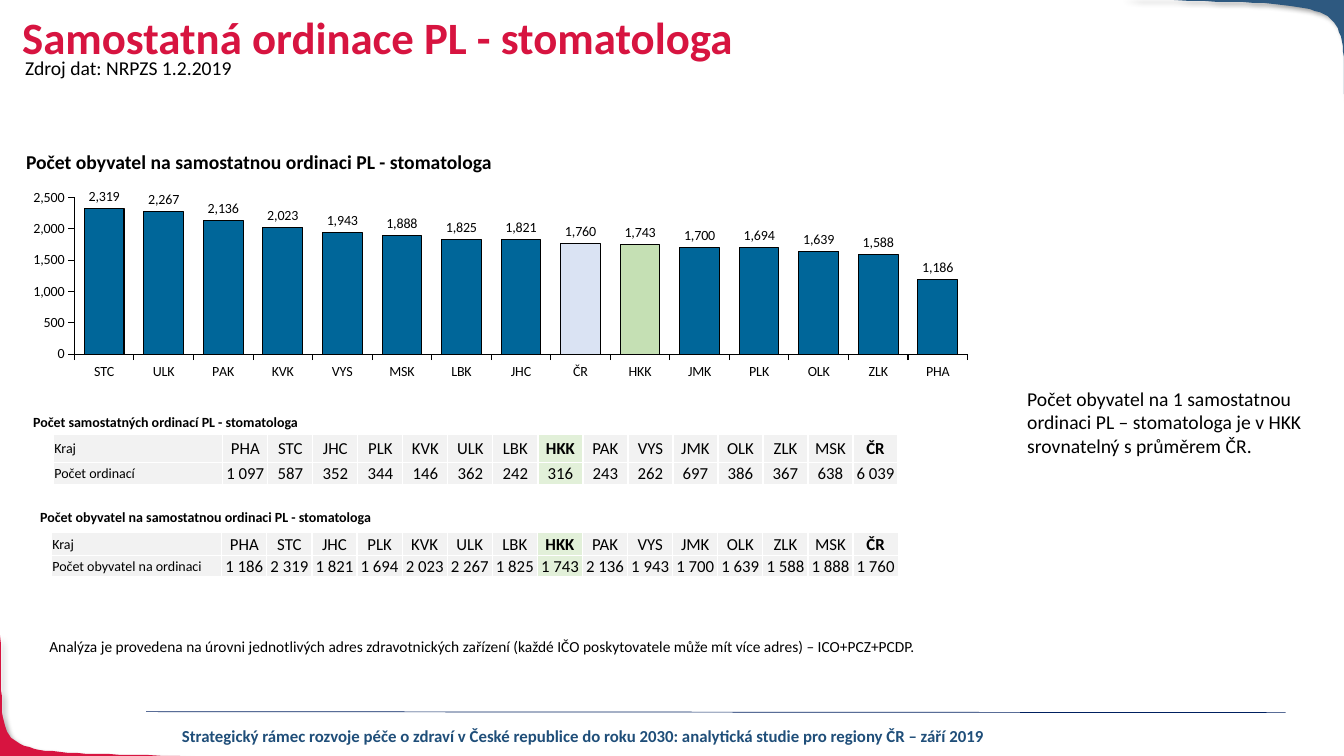
from lxml.etree import SubElement
from pptx import Presentation
from pptx.chart.data import CategoryChartData
from pptx.dml.color import RGBColor
from pptx.enum.chart import XL_CHART_TYPE, XL_LABEL_POSITION, XL_TICK_MARK
from pptx.enum.shapes import MSO_CONNECTOR, MSO_SHAPE
from pptx.enum.text import MSO_ANCHOR, MSO_AUTO_SIZE, PP_ALIGN
from pptx.oxml import parse_xml
from pptx.oxml.ns import nsdecls, qn
from pptx.util import Pt

PX = 9144  # 100 px to the inch
FONT = "Calibri"
BLACK, WHITE = "000000", "FFFFFF"
RED, BLUE, NAVY = "D71440", "2E5980", "002060"
CELL, CELL_HKK = "F2F2F2", "E2F0D9"
BAR, BAR_CR, BAR_HKK = "006699", "DAE3F3", "C5E0B4"

REGIONS = ["PHA", "STC", "JHC", "PLK", "KVK", "ULK", "LBK", "HKK",
           "PAK", "VYS", "JMK", "OLK", "ZLK", "MSK", "ČR"]
PRACTICES = [1097, 587, 352, 344, 146, 362, 242, 316,
             243, 262, 697, 386, 367, 638, 6039]
INHABITANTS = [1186, 2319, 1821, 1694, 2023, 2267, 1825, 1743,
               2136, 1943, 1700, 1639, 1588, 1888, 1760]
PER_PRACTICE = "Počet obyvatel na samostatnou ordinaci PL - stomatologa"


def color(value):
    return RGBColor.from_string(value)


def px(*lengths):
    return [length * PX for length in lengths]


def paint(target, fill, line=None, width=0.75):
    target.fill.solid()
    target.fill.fore_color.rgb = color(fill)
    if line:
        target.line.color.rgb = color(line)
        target.line.width = Pt(width)
    else:
        target.line.fill.background()


def set_font(font, size, ink=BLACK, bold=False):
    font.name = FONT
    font.size = Pt(size)
    font.bold = bold
    font.color.rgb = color(ink)


def write(frame, text, size, ink=BLACK, bold=False, align=PP_ALIGN.LEFT):
    para = frame.paragraphs[0]
    para.alignment = align
    span = para.add_run()
    span.text = text
    set_font(span.font, size, ink, bold)
    return para


def add_text(page, place, text, size, **style):
    box = page.shapes.add_textbox(*px(*place))
    box.text_frame.word_wrap = True
    write(box.text_frame, text, size, **style)


def add_title(page, place, text):
    title = page.shapes.title
    title.left, title.top, title.width, title.height = px(*place)
    frame = title.text_frame
    frame.auto_size = MSO_AUTO_SIZE.NONE
    frame.vertical_anchor = MSO_ANCHOR.TOP
    write(frame, text, 32, RED, True).line_spacing = 0.9


def curve(points, steps=40):
    """Return points along a cubic Bézier curve."""
    for step in range(steps + 1):
        t = step / steps
        weights = ((1 - t) ** 3, 3 * t * (1 - t) ** 2, 3 * t * t * (1 - t), t ** 3)
        yield tuple(sum(w * p[axis] for w, p in zip(weights, points)) for axis in (0, 1))


def add_corner(page, bend, corner, fill):
    start, *rest = curve(bend)
    builder = page.shapes.build_freeform(*start, scale=PX)
    builder.add_line_segments(rest + [corner], close=True)
    shape = builder.convert_to_shape()
    paint(shape, fill)
    shape.shadow.inherit = False
    effects = shape.element.spPr.find(qn("a:effectLst"))
    effects.append(parse_xml(
        f'<a:outerShdw {nsdecls("a")} blurRad="50800" dist="38100" dir="2700000">'
        f'<a:srgbClr val="{BLACK}"><a:alpha val="40000"/></a:srgbClr></a:outerShdw>'))


def add_rule(page, start, end):
    rule = page.shapes.add_connector(MSO_CONNECTOR.STRAIGHT, *px(*start, *end))
    rule.line.color.rgb = color(NAVY)
    rule.line.width = Pt(0.5)
    SubElement(rule.element.spPr, qn("a:effectLst"))


def add_comment(page, place, text):
    panel = page.shapes.add_shape(MSO_SHAPE.RECTANGLE, *px(*place))
    panel.shadow.inherit = False
    paint(panel, WHITE, WHITE, 0.25)
    panel.text_frame.word_wrap = True
    panel.text_frame.vertical_anchor = MSO_ANCHOR.MIDDLE
    write(panel.text_frame, text, 14)


def format_cell(cell, fill, anchor):
    cell.margin_left = cell.margin_right = cell.margin_top = PX
    cell.margin_bottom = 0
    cell.vertical_anchor = anchor
    cell.fill.solid()
    cell.fill.fore_color.rgb = color(fill)
    properties = cell._tc.get_or_add_tcPr()
    for index, side in enumerate(("lnL", "lnR", "lnT", "lnB")):
        properties.insert(index, parse_xml(
            f'<a:{side} {nsdecls("a")} w="12700"><a:solidFill>'
            f'<a:srgbClr val="{WHITE}"/></a:solidFill></a:{side}>'))


def add_region_table(page, place, label_width, heights, label, values, anchor):
    numbers = [f"{value:,}".replace(",", " ") for value in values]
    rows = [["Kraj"] + REGIONS, [label] + numbers]
    table = page.shapes.add_table(2, len(rows[0]), *px(*place)).table
    for column in table.columns:
        column.width = (place[2] - label_width) * PX // len(REGIONS)
    table.columns[0].width = label_width * PX
    for r, texts in enumerate(rows):
        table.rows[r].height = heights[r] * PX
        for c, text in enumerate(texts):
            cell = table.cell(r, c)
            region = rows[0][c]
            format_cell(cell, CELL_HKK if region == "HKK" else CELL,
                        anchor if c else MSO_ANCHOR.MIDDLE)
            write(cell.text_frame, text, 12 if c else 10,
                  bold=r == 0 and region in ("HKK", "ČR"),
                  align=PP_ALIGN.CENTER if c else PP_ALIGN.LEFT)


def place_plot(chart, **fractions):
    area = chart._chartSpace.chart.plotArea
    for layout in area.findall(qn("c:layout")):
        area.remove(layout)
    sizes = "".join(f'<c:{key} val="{value}"/>' for key, value in fractions.items())
    area.insert(0, parse_xml(
        f'<c:layout {nsdecls("c")}><c:manualLayout><c:layoutTarget val="inner"/>'
        f'<c:xMode val="edge"/><c:yMode val="edge"/>{sizes}</c:manualLayout></c:layout>'))


def add_region_chart(page, place):
    ranking = sorted(zip(INHABITANTS, REGIONS), reverse=True)
    regions = [region for _, region in ranking]
    data = CategoryChartData(number_format="#,##0")
    data.categories = regions
    data.add_series("Počet obyvatel", [value for value, _ in ranking])
    chart = page.shapes.add_chart(XL_CHART_TYPE.COLUMN_CLUSTERED, *px(*place), data).chart
    chart.has_legend = chart.has_title = False
    set_font(chart.font, 10)
    for axis in (chart.category_axis, chart.value_axis):
        axis.has_major_gridlines = False
        axis.major_tick_mark = XL_TICK_MARK.OUTSIDE
        axis.format.line.color.rgb = color(BLACK)
        axis.format.line.width = Pt(0.75)
        set_font(axis.tick_labels.font, 10)
    scale = chart.value_axis
    scale.minimum_scale, scale.maximum_scale, scale.major_unit = 0, 2500, 500
    scale.tick_labels.number_format = "#,##0"
    scale.tick_labels.number_format_is_linked = False
    plot = chart.plots[0]
    plot.gap_width = 50
    plot.vary_by_categories = False
    plot.has_data_labels = True
    labels = plot.data_labels
    labels.show_value = True
    labels.position = XL_LABEL_POSITION.OUTSIDE_END
    labels.number_format = "#,##0"
    labels.number_format_is_linked = False
    set_font(labels.font, 10)
    bars = plot.series[0]
    paint(bars.format, BAR, BLACK)
    for region, fill in (("ČR", BAR_CR), ("HKK", BAR_HKK)):
        paint(bars.points[regions.index(region)].format, fill, BLACK)
    place_plot(chart, x=0.06, y=0.06, w=0.92, h=0.79)


def main():
    deck = Presentation()
    deck.slide_width, deck.slide_height = px(1333, 750)
    page = deck.slides.add_slide(deck.slide_layouts[5])
    add_corner(page, [(213, 751), (-34, 744), (8, 759), (0, 630)], (-1, 751), RED)
    add_corner(page, [(1111, -1), (1370, 7), (1326, -10), (1335, 142)], (1335, -1), BLUE)
    add_rule(page, (145, 706), (1275, 707))
    add_text(page, (168, 715, 821, 30),
             "Strategický rámec rozvoje péče o zdraví v České republice do roku 2030: "
             "analytická studie pro regiony ČR – září 2019",
             12, ink="1F4E79", bold=True, align=PP_ALIGN.CENTER)
    add_title(page, (12, 11, 1150, 69), "Samostatná ordinace PL - stomatologa")
    add_text(page, (15, 51, 1277, 34), "Zdroj dat: NRPZS 1.2.2019", 14)
    add_text(page, (16, 144, 703, 34), PER_PRACTICE, 14, bold=True)
    add_region_chart(page, (16, 184, 963, 197))
    add_comment(page, (1009, 247, 296, 343),
                "Počet obyvatel na 1 samostatnou ordinaci PL – stomatologa je v HKK "
                "srovnatelný s průměrem ČR.")
    add_text(page, (23, 405, 515, 27), "Počet samostatných ordinací PL - stomatologa",
             10, bold=True)
    add_region_table(page, (53, 431, 838, 50), 168, (28, 22), "Počet ordinací",
                     PRACTICES, MSO_ANCHOR.MIDDLE)
    add_text(page, (30, 500, 631, 27), PER_PRACTICE, 10, bold=True)
    add_region_table(page, (51, 528, 840, 44), 169, (23, 21), "Počet obyvatel na ordinaci",
                     INHABITANTS, MSO_ANCHOR.BOTTOM)
    add_text(page, (39, 627, 959, 29),
             "Analýza je provedena na úrovni jednotlivých adres zdravotnických zařízení "
             "(každé IČO poskytovatele může mít více adres) – ICO+PCZ+PCDP.", 11)
    deck.save("out.pptx")


if __name__ == "__main__":
    main()
